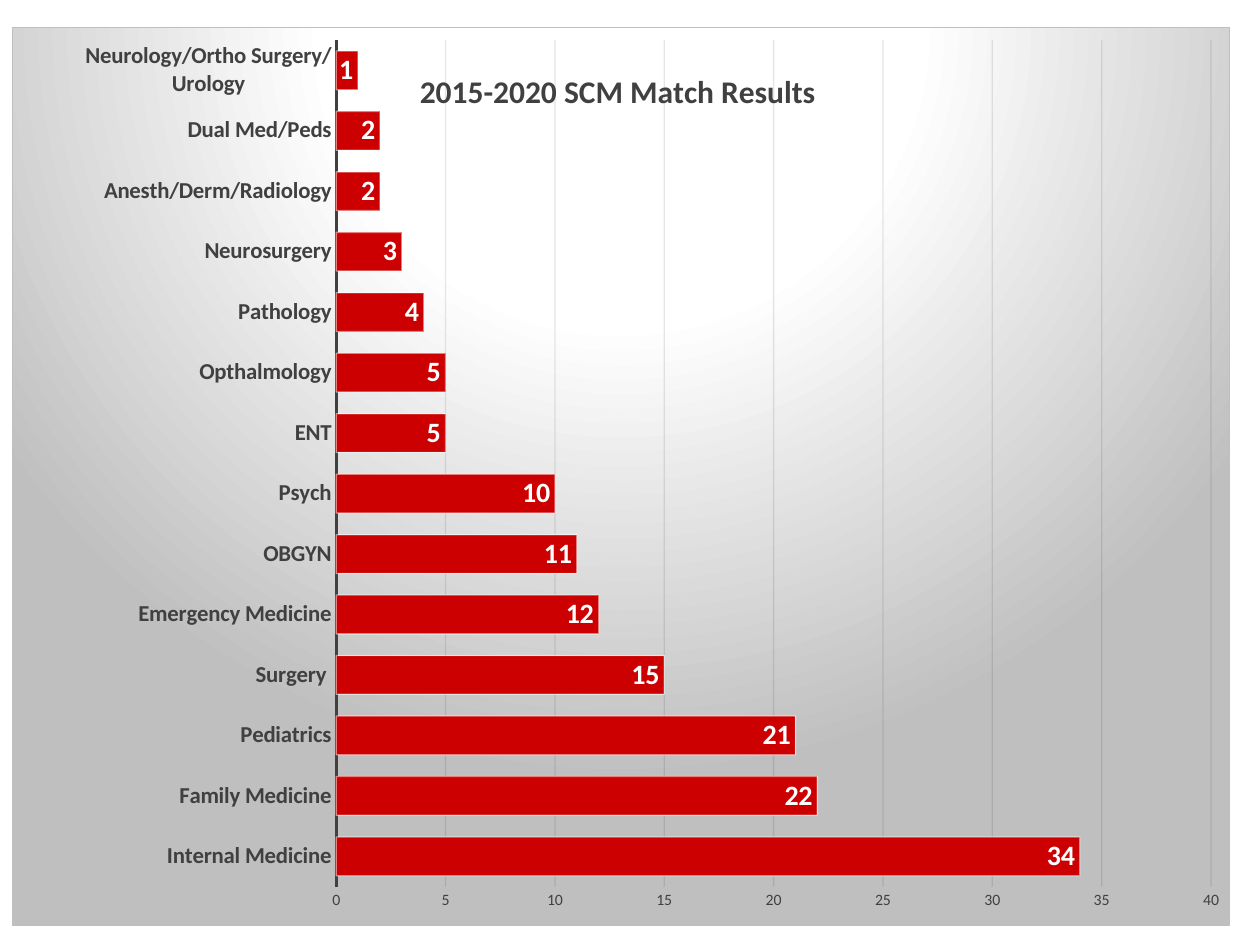
from lxml import etree
from pptx import Presentation, util as u
from pptx.chart.data import CategoryChartData
from pptx.dml.color import RGBColor
from pptx.enum import chart as ch
from pptx.oxml import parse_xml
from pptx.oxml.ns import nsdecls, qn

PX = 914400 / 126
TITLE = "2015-2020 SCM Match Results"
MATCHES = [
    ("Internal Medicine", 34), ("Family Medicine", 22), ("Pediatrics", 21),
    ("Surgery ", 15), ("Emergency Medicine", 12), ("OBGYN", 11),
    ("Psych", 10), ("ENT", 5), ("Opthalmology", 5), ("Pathology", 4),
    ("Neurosurgery", 3), ("Anesth/Derm/Radiology", 2), ("Dual Med/Peds", 2),
    ("Neurology/Ortho Surgery/ Urology", 1),
]
CHART_BOX = (12, 27, 1218, 899)
PLOT = {"layoutTarget": "inner", "xMode": "edge", "yMode": "edge",
        "x": 0.266, "y": 0.014, "w": 0.719, "h": 0.943}
TITLE_PLACE = {"xMode": "edge", "yMode": "edge", "x": 0.33, "y": 0.04}
STOPS = [(0, "FFFFFF"), (39, "FFFFFF"), (100, "BFBFBF")]


def px(n):
    return u.Emu(round(n * PX))


def rgb(value):
    return RGBColor.from_string(value)


def style_font(font, color, **values):
    for name, value in {"name": "Calibri", **values}.items():
        setattr(font, name, value)
    font.color.rgb = rgb(color)


def style_line(line, color, width):
    line.color.rgb = rgb(color)
    line.width = u.Pt(width)


def set_alpha(color, percent):
    etree.SubElement(color, qn("a:alpha")).set("val", str(percent * 1000))


def layout(values):
    items = "".join(f'<c:{k} val="{v}"/>' for k, v in values.items())
    return parse_xml(f'<c:layout {nsdecls("c")}><c:manualLayout>{items}'
                     '</c:manualLayout></c:layout>')


def backdrop():
    stops = "".join(f'<a:gs pos="{p * 1000}"><a:srgbClr val="{c}"/></a:gs>'
                    for p, c in STOPS)
    return parse_xml(
        f'<c:spPr {nsdecls("c", "a")}><a:gradFill><a:gsLst>{stops}</a:gsLst>'
        '<a:path path="circle"><a:fillToRect l="50000" t="-80000" r="50000" '
        'b="180000"/></a:path></a:gradFill><a:ln w="9525"><a:solidFill>'
        '<a:srgbClr val="BFBFBF"/></a:solidFill></a:ln></c:spPr>')


prs = Presentation()
prs.slide_width, prs.slide_height = u.Inches(10), u.Inches(7.5)
s = prs.slides.add_slide(prs.slide_layouts[6])

data = CategoryChartData()
data.categories = [name for name, _ in MATCHES]
data.add_series("Series 1", [count for _, count in MATCHES])
chart = s.shapes.add_chart(ch.XL_CHART_TYPE.BAR_CLUSTERED,
                           *map(px, CHART_BOX), data).chart
chart.has_legend = False
style_font(chart.font, "000000", size=u.Pt(10))

chart.has_title = True
tf = chart.chart_title.text_frame
tf.text = TITLE
style_font(tf.paragraphs[0].runs[0].font, "404040", size=u.Pt(18), bold=True)

plot = chart.plots[0]
plot.gap_width, plot.overlap, plot.vary_by_categories = 56, 9, False
series = plot.series[0]
series.format.fill.solid()
series.format.fill.fore_color.rgb = rgb("CC0000")
style_line(series.format.line, "FFFFFF", 0.75)

plot.has_data_labels = True
labels = plot.data_labels
labels.show_value = True
labels.position = ch.XL_LABEL_POSITION.INSIDE_END
style_font(labels.font, "FFFFFF", size=u.Pt(16), bold=True)

cat, val = chart.category_axis, chart.value_axis
for axis, size, bold in ((cat, 13, True), (val, 9, False)):
    axis.major_tick_mark = axis.minor_tick_mark = ch.XL_TICK_MARK.NONE
    style_font(axis.tick_labels.font, "404040", size=u.Pt(size), bold=bold)
style_line(cat.format.line, "404040", 1.5)
val.format.line.fill.background()
val.minimum_scale, val.maximum_scale, val.major_unit = 0, 40, 5
val.has_major_gridlines = True
style_line(val.major_gridlines.format.line, "0D0D0D", 0.75)

root = chart.element
set_alpha(root.xpath(".//c:ser/c:spPr/a:ln//a:srgbClr")[0], 50)
set_alpha(root.xpath(".//c:majorGridlines//a:srgbClr")[0], 10)
root.xpath("c:chart")[0].addnext(backdrop())

area = root.xpath(".//c:plotArea")[0]
for old in root.xpath(".//c:plotArea/c:layout | .//c:title/c:layout"):
    old.getparent().remove(old)
area.insert(0, layout(PLOT))
root.xpath(".//c:title/c:tx")[0].addnext(layout(TITLE_PLACE))
chart.chart_title.include_in_layout = True
for overlay in root.xpath(".//c:title/c:overlay"):
    overlay.set("val", "1")

prs.save("out.pptx")
